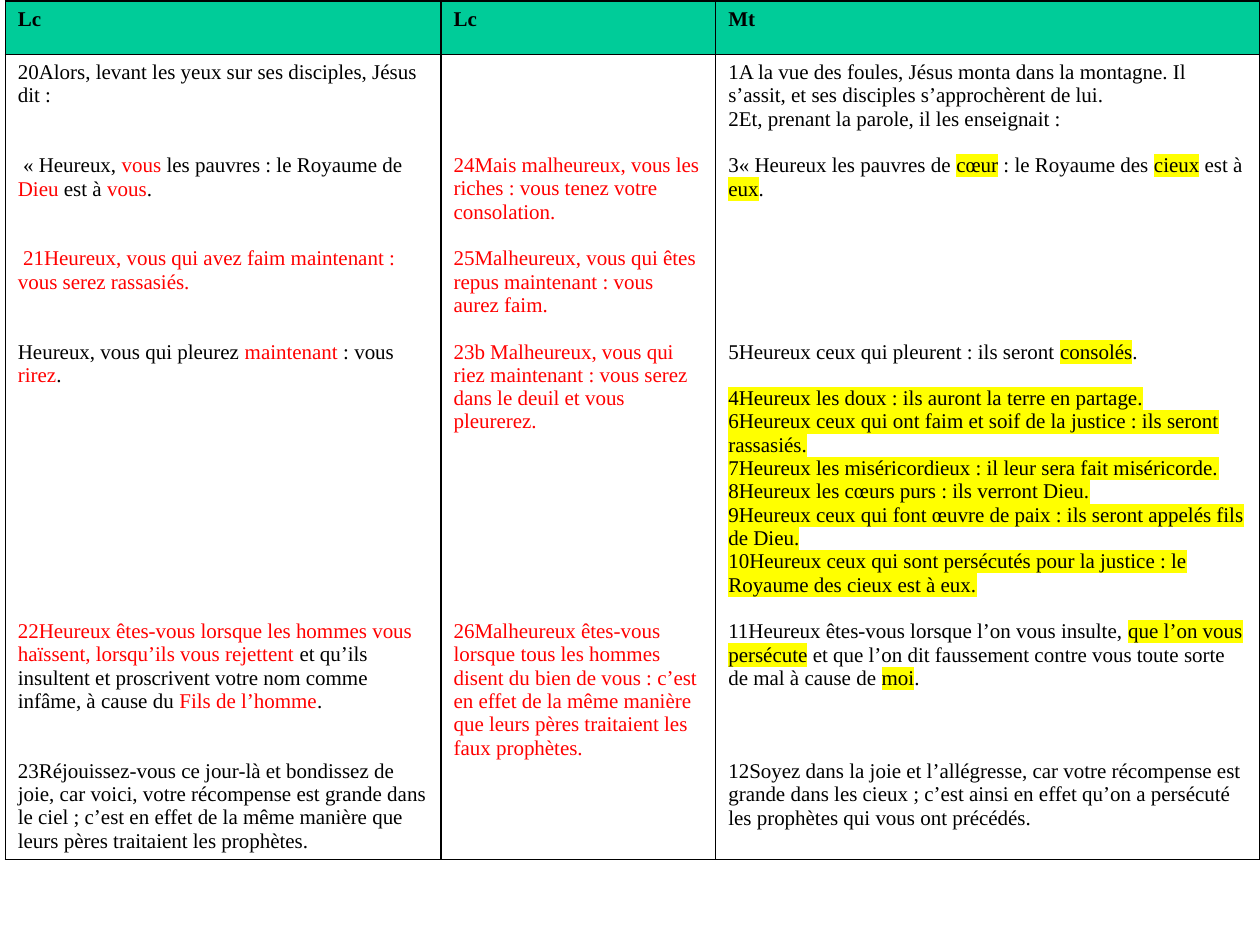
from dataclasses import dataclass
from typing import Optional

import pptx
import pptx.dml.color
import pptx.oxml
import pptx.oxml.ns
import pptx.util

Pt = pptx.util.Pt
RGBColor = pptx.dml.color.RGBColor

BLACK = RGBColor(0x00, 0x00, 0x00)
WHITE = RGBColor(0xFF, 0xFF, 0xFF)
RED = RGBColor(0xFF, 0x00, 0x00)
YELLOW = RGBColor(0xFF, 0xFF, 0x00)
GREEN = RGBColor(0x00, 0xCC, 0x99)

FONT = "Times New Roman"
FONT_SIZE = 12
LINE_PITCH = 13.3
MARGIN_TOP = 3.6
HEADER_HEIGHT = 30.5
BODY_HEIGHT = 460


@dataclass
class Run:
    text: str
    color: RGBColor = BLACK
    mark: Optional[RGBColor] = None
    bold: bool = False


@dataclass
class Verse:
    gap_lines: int
    runs: list[Run]


@dataclass
class Column:
    title: str
    width: float
    verses: list[Verse]


def red(text: str) -> Run:
    return Run(text, color=RED)


def marked(text: str) -> Run:
    return Run(text, mark=YELLOW)


COLUMNS = [
    Column("Lc", 249, [
        Verse(0, [Run("20Alors, levant les yeux sur ses disciples, Jésus dit :")]),
        Verse(2, [Run(" « Heureux, "), red("vous"), Run(" les pauvres : le Royaume de "),
                  red("Dieu"), Run(" est à "), red("vous"), Run(".")]),
        Verse(2, [red(" 21Heureux, vous qui avez faim maintenant : vous serez rassasiés.")]),
        Verse(2, [Run("Heureux, vous qui pleurez "), red("maintenant"), Run(" : vous "),
                  red("rirez"), Run(".")]),
        Verse(10, [red("22Heureux êtes-vous lorsque les hommes vous haïssent, "
                       "lorsqu’ils vous rejettent "),
                   Run("et qu’ils insultent et proscrivent votre nom comme infâme, à cause du "),
                   red("Fils de l’homme"), Run(".")]),
        Verse(2, [Run("23Réjouissez-vous ce jour-là et bondissez de joie, car voici, votre "
                      "récompense est grande dans le ciel ; c’est en effet de la même manière "
                      "que leurs pères traitaient les prophètes.")]),
    ]),
    Column("Lc", 157, [
        Verse(4, [red("24Mais malheureux, vous les riches : vous tenez votre consolation.")]),
        Verse(1, [red("25Malheureux, vous qui êtes repus maintenant : vous aurez faim.")]),
        Verse(1, [red("23b Malheureux, vous qui riez maintenant : vous serez dans le deuil "
                      "et vous pleurerez.")]),
        Verse(8, [red("26Malheureux êtes-vous lorsque tous les hommes disent du bien de vous : "
                      "c’est en effet de la même manière que leurs pères traitaient les faux "
                      "prophètes.")]),
    ]),
    Column("Mt", 311, [
        Verse(0, [Run("1A la vue des foules, Jésus monta dans la montagne. Il s’assit, et ses "
                      "disciples s’approchèrent de lui.")]),
        Verse(0, [Run("2Et, prenant la parole, il les enseignait :")]),
        Verse(1, [Run("3« Heureux les pauvres de "), marked("cœur"), Run(" : le Royaume des "),
                  marked("cieux"), Run(" est à "), marked("eux"), Run(".")]),
        Verse(6, [Run("5Heureux ceux qui pleurent : ils seront "), marked("consolés"), Run(".")]),
        Verse(1, [marked("4Heureux les doux : ils auront la terre en partage.")]),
        Verse(0, [marked("6Heureux ceux qui ont faim et soif de la justice : ils seront "
                         "rassasiés.")]),
        Verse(0, [marked("7Heureux les miséricordieux : il leur sera fait miséricorde.")]),
        Verse(0, [marked("8Heureux les cœurs purs : ils verront Dieu.")]),
        Verse(0, [marked("9Heureux ceux qui font œuvre de paix : ils seront appelés fils "
                         "de Dieu.")]),
        Verse(0, [marked("10Heureux ceux qui sont persécutés pour la justice : le Royaume des "
                         "cieux est à eux.")]),
        Verse(1, [Run("11Heureux êtes-vous lorsque l’on vous insulte, "),
                  marked("que l’on vous persécute"),
                  Run(" et que l’on dit faussement contre vous toute sorte de mal à cause de "),
                  marked("moi"), Run(".")]),
        Verse(3, [Run("12Soyez dans la joie et l’allégresse, car votre récompense est grande "
                      "dans les cieux ; c’est ainsi en effet qu’on a persécuté les prophètes "
                      "qui vous ont précédés.")]),
    ]),
]


def add_run(p, run: Run) -> None:
    r = p.add_run()
    r.text = run.text
    r.font.size = Pt(FONT_SIZE)
    r.font.bold = run.bold
    r.font.color.rgb = run.color
    if run.mark is not None:
        r.font._element.append(pptx.oxml.parse_xml(
            f'<a:highlight {pptx.oxml.ns.nsdecls("a")}>'
            f'<a:srgbClr val="{run.mark}"/></a:highlight>'))
    r.font.name = FONT


def add_borders(cell) -> None:
    tc_pr = cell._tc.get_or_add_tcPr()
    for i, side in enumerate(("lnL", "lnR", "lnT", "lnB")):
        tc_pr.insert(i, pptx.oxml.parse_xml(
            f'<a:{side} {pptx.oxml.ns.nsdecls("a")} w="{Pt(1)}"><a:solidFill>'
            f'<a:srgbClr val="{BLACK}"/></a:solidFill></a:{side}>'))


def fill_cell(cell, verses: list[Verse], fill: RGBColor) -> None:
    cell.fill.solid()
    cell.fill.fore_color.rgb = fill
    add_borders(cell)
    cell.margin_top = Pt(MARGIN_TOP + verses[0].gap_lines * LINE_PITCH)
    tf = cell.text_frame
    for i, verse in enumerate(verses):
        p = tf.add_paragraph() if i else tf.paragraphs[0]
        if i:
            p.space_before = Pt(verse.gap_lines * LINE_PITCH)
        for run in verse.runs:
            add_run(p, run)


def add_comparison(s, columns: list[Column]) -> None:
    width = sum(column.width for column in columns)
    table = s.shapes.add_table(2, len(columns), Pt(3), Pt(0.7), Pt(width),
                               Pt(HEADER_HEIGHT + BODY_HEIGHT)).table
    table.first_row = False
    table.horz_banding = False
    table.rows[0].height = Pt(HEADER_HEIGHT)
    table.rows[1].height = Pt(BODY_HEIGHT)
    for i, column in enumerate(columns):
        table.columns[i].width = Pt(column.width)
        fill_cell(table.cell(0, i), [Verse(0, [Run(column.title, bold=True)])], GREEN)
        fill_cell(table.cell(1, i), column.verses, WHITE)


def main() -> None:
    prs = pptx.Presentation()
    prs.slide_width = Pt(720)
    prs.slide_height = Pt(540)
    s = prs.slides.add_slide(prs.slide_layouts[6])
    add_comparison(s, COLUMNS)
    prs.save("out.pptx")


if __name__ == "__main__":
    main()
